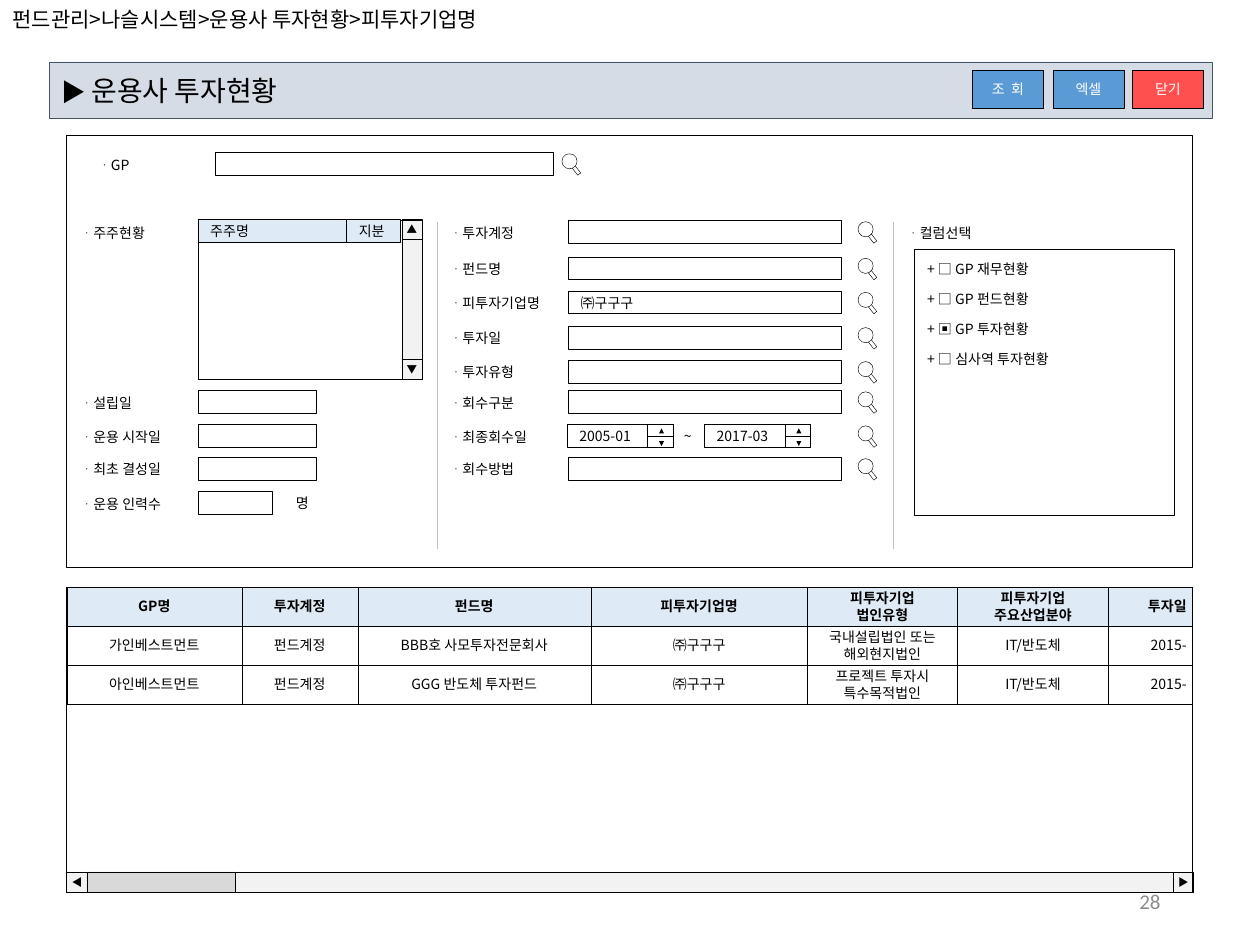
from lxml.etree import SubElement
from pptx import Presentation
from pptx.dml.color import RGBColor
from pptx.enum.shapes import MSO_CONNECTOR as Connector, MSO_SHAPE as Shape
from pptx.enum.text import MSO_ANCHOR as Anchor, MSO_AUTO_SIZE as AutoSize, PP_ALIGN as Align
from pptx.oxml.ns import qn
from pptx.util import Inches, Pt

BLACK = RGBColor(0x00, 0x00, 0x00)
WHITE = RGBColor(0xFF, 0xFF, 0xFF)
BAR = RGBColor(0xD6, 0xDC, 0xE5)
BAR_EDGE = RGBColor(0x44, 0x54, 0x6A)
BLUE = RGBColor(0x5B, 0x9B, 0xD5)
RED = RGBColor(0xFF, 0x50, 0x50)
HEADER = RGBColor(0xDE, 0xEB, 0xF7)
TRACK = RGBColor(0xF2, 0xF2, 0xF2)
THUMB = RGBColor(0xD9, 0xD9, 0xD9)
DIVIDER = RGBColor(0xBF, 0xBF, 0xBF)
PAGE_GREY = RGBColor(0x8C, 0x8C, 0x8C)

INSETS = (0.1, 0.05, 0.1, 0.05)
FIELD_HEIGHT = 0.18
BUTTON = 0.16

SHAREHOLDER_LABEL = ("ᆞ주주현황", 1.74)
FUND_ROWS = [("ᆞ설립일", 3.09, 0.94), ("ᆞ운용 시작일", 3.36, 0.94),
             ("ᆞ최초 결성일", 3.62, 0.94), ("ᆞ운용 인력수", 3.89, 0.59)]
INVESTMENT_ROWS = [("ᆞ투자계정", 1.74, ""), ("ᆞ펀드명", 2.03, ""), ("ᆞ피투자기업명", 2.3, "㈜구구구"),
                   ("ᆞ투자일", 2.58, ""), ("ᆞ투자유형", 2.85, ""), ("ᆞ회수구분", 3.09, ""),
                   ("ᆞ최종회수일", 3.36, None), ("ᆞ회수방법", 3.62, "")]
COLUMN_CHOICES = ["+ □ GP 재무현황", "+ □ GP 펀드현황", "+ ▣ GP 투자현황", "+ □ 심사역 투자현황"]
COLUMN_WIDTHS = [1.39, 0.92, 1.85, 1.72, 1.19, 1.2, 0.66]
INVESTMENTS = [
    ["GP명", "투자계정", "펀드명", "피투자기업명", "피투자기업\n법인유형", "피투자기업\n주요산업분야", "투자일"],
    ["가인베스트먼트", "펀드계정", "BBB호 사모투자전문회사", "㈜구구구", "국내설립법인 또는 해외현지법인",
     "IT/반도체", "2015-"],
    ["아인베스트먼트", "펀드계정", "GGG 반도체 투자펀드", "㈜구구구", "프로젝트 투자시 특수목적법인",
     "IT/반도체", "2015-"],
]


class Screen:
    font = "Noto Sans CJK KR"
    hairline = Pt(0.25)

    def __init__(self, slide):
        self.slide = slide

    def style_run(self, run, size, color, font, bold=False):
        run.font.size = Pt(size)
        run.font.bold = bold
        run.font.color.rgb = color
        run.font.name = font
        SubElement(run._r.get_or_add_rPr(), qn("a:ea"), typeface=font)

    def fill_text(self, frame, text, size=8, color=BLACK, align=Align.LEFT, insets=INSETS,
                  font=None):
        frame.text = text
        frame.word_wrap = True
        frame.auto_size = AutoSize.NONE
        frame.vertical_anchor = Anchor.MIDDLE
        (frame.margin_left, frame.margin_top,
         frame.margin_right, frame.margin_bottom) = map(Inches, insets)
        for paragraph in frame.paragraphs:
            paragraph.alignment = align
            for run in paragraph.runs:
                self.style_run(run, size, color, font or self.font)

    def title(self, text, *box):
        holder = self.slide.shapes.title
        holder.left, holder.top, holder.width, holder.height = map(Inches, box)
        self.fill_text(holder.text_frame, text, size=12)

    def label(self, text, *box, **style):
        holder = self.slide.shapes.add_textbox(*map(Inches, box))
        self.fill_text(holder.text_frame, text, **style)

    def box(self, *place, fill=None, line=BLACK, kind=Shape.RECTANGLE, rotation=0,
            text="", parent=None, **style):
        shape = (parent or self.slide).shapes.add_shape(kind, *map(Inches, place))
        shape.shadow.inherit = False
        shape.rotation = rotation
        if fill is None:
            shape.fill.background()
        else:
            shape.fill.solid()
            shape.fill.fore_color.rgb = fill
        if line is None:
            shape.line.fill.background()
        else:
            shape.line.color.rgb = line
            shape.line.width = self.hairline
        if text:
            self.fill_text(shape.text_frame, text, **style)
        return shape

    def magnifier(self, left, top):
        glass = self.slide.shapes.add_group_shape()
        self.box(left + 0.04, top + 0.1, 0.12, 0.03, rotation=51.8, parent=glass)
        self.box(left, top, 0.12, 0.12, kind=Shape.OVAL, fill=WHITE, parent=glass)

    def month_picker(self, left, top, month):
        self.box(left, top, 0.84, FIELD_HEIGHT, text=month)
        spinner = self.slide.shapes.add_group_shape()
        edge = left + 0.64
        self.box(edge, top, 0.2, FIELD_HEIGHT, parent=spinner)
        for offset, rotation in ((0.03, 0), (0.13, 180)):
            self.box(edge + 0.09, top + offset, 0.04, 0.04, kind=Shape.ISOSCELES_TRIANGLE,
                     fill=BLACK, line=None, rotation=rotation, parent=spinner)
        self.box(edge, top + 0.09, 0.2, 0.09, parent=spinner)

    def scroll_button(self, left, top, arrow, align, side):
        self.box(left, top, BUTTON, BUTTON, text=arrow, size=6, align=align,
                 insets=(side, 0, side, 0))

    def divider(self, x, top, bottom):
        rule = self.slide.shapes.add_connector(
            Connector.STRAIGHT, *map(Inches, (x, top, x, bottom)))
        rule.line.color.rgb = DIVIDER
        rule.line.width = self.hairline
        SubElement(rule._element.spPr, qn("a:effectLst"))

    def border(self, cell):
        properties = cell._tc.get_or_add_tcPr()
        for position, side in enumerate(("a:lnL", "a:lnR", "a:lnT", "a:lnB")):
            edge = properties.makeelement(qn(side), {"w": str(int(self.hairline))})
            SubElement(SubElement(edge, qn("a:solidFill")), qn("a:srgbClr"), val=str(BLACK))
            properties.insert(position, edge)

    def table(self, rows, widths, left, top, row_height):
        frame = self.slide.shapes.add_table(
            len(rows), len(widths),
            *map(Inches, (left, top, sum(widths), row_height * len(rows))))
        grid = frame.table
        for column, width in zip(grid.columns, widths):
            column.width = Inches(width)
        for row_index, texts in enumerate(rows):
            grid.rows[row_index].height = Inches(row_height)
            for column_index, text in enumerate(texts):
                last = column_index == len(widths) - 1
                cell = grid.cell(row_index, column_index)
                cell.text_frame.text = text
                cell.vertical_anchor = Anchor.MIDDLE
                cell.margin_top = cell.margin_bottom = 0
                cell.margin_left = Inches(0.1)
                cell.margin_right = Inches(0.04 if last else 0.1)
                cell.fill.solid()
                cell.fill.fore_color.rgb = WHITE if row_index else HEADER
                self.border(cell)
                for paragraph in cell.text_frame.paragraphs:
                    paragraph.alignment = Align.RIGHT if last else Align.CENTER
                    paragraph.line_spacing = 0.85
                    for run in paragraph.runs:
                        self.style_run(run, 8, BLACK, self.font, bold=row_index == 0)


def main():
    deck = Presentation()
    deck.slide_width, deck.slide_height = Inches(10), Inches(7.5)
    screen = Screen(deck.slides.add_slide(deck.slide_layouts[5]))

    screen.title("펀드관리>나슬시스템>운용사 투자현황>피투자기업명", 0, -0.01, 10, 0.33)
    heading = screen.box(0.39, 0.49, 9.23, 0.45, fill=BAR, line=BAR_EDGE, text="▶ ", size=14)
    heading_run = heading.text_frame.paragraphs[0].add_run()
    heading_run.text = "운용사 투자현황"
    screen.style_run(heading_run, 16, BLACK, screen.font)
    for left, caption, fill in ((7.72, "조  회", BLUE), (8.36, "엑셀", BLUE), (8.99, "닫기", RED)):
        screen.box(left, 0.56, 0.56, 0.3, fill=fill, text=caption, color=WHITE, align=Align.CENTER)

    screen.box(0.53, 1.07, 8.93, 3.43)
    screen.label("ᆞGP", 0.68, 1.2, 1.03, 0.21)
    screen.box(1.71, 1.21, 2.68, FIELD_HEIGHT)
    screen.magnifier(4.46, 1.22)
    for x in (3.47, 7.09):
        screen.divider(x, 1.76, 4.36)

    name, top = SHAREHOLDER_LABEL
    screen.label(name, 0.54, top, 1.03, 0.21)
    screen.box(1.57, 1.75, 1.77, 1.26)
    screen.box(1.57, top, 1.18, FIELD_HEIGHT, fill=HEADER, text="주주명")
    screen.box(2.75, top, 0.43, FIELD_HEIGHT, fill=HEADER, text="지분")
    screen.box(3.19, 1.75, BUTTON, 1.26, fill=TRACK)
    screen.scroll_button(3.19, 1.74, "▲", Align.CENTER, 0)
    screen.scroll_button(3.19, 2.85, "▼", Align.CENTER, 0)
    for name, top, width in FUND_ROWS:
        screen.label(name, 0.54, top, 1.03, 0.21)
        screen.box(1.57, top + 0.01, width, FIELD_HEIGHT)
    screen.label("명", 2.25, 3.9, 0.28, FIELD_HEIGHT)

    for name, top, value in INVESTMENT_ROWS:
        screen.label(name, 3.47, top, 1.03, 0.21)
        if value is None:
            screen.month_picker(4.5, top + 0.01, "2005-01")
            screen.label("~", 5.33, top + 0.01, 0.24, FIELD_HEIGHT)
            screen.month_picker(5.59, top + 0.01, "2017-03")
        else:
            screen.box(4.51, top + 0.01, 2.17, FIELD_HEIGHT, text=value)
        screen.magnifier(6.81, top + 0.02)

    screen.label("ᆞ컬럼선택", 7.1, 1.74, 1.03, 0.21)
    screen.box(7.26, 1.98, 2.06, 2.11)
    for index, choice in enumerate(COLUMN_CHOICES):
        screen.label(choice, 7.26, 2.03 + 0.71 / 3 * index, 1.3, 0.21)

    screen.box(0.53, 4.66, 8.93, 2.42)
    screen.table(INVESTMENTS, COLUMN_WIDTHS, 0.53, 4.66, 0.31)
    screen.box(0.53, 6.92, 8.93, BUTTON, fill=TRACK)
    screen.box(0.69, 6.92, 1.18, BUTTON, fill=THUMB)
    screen.scroll_button(0.53, 6.92, "◀", Align.LEFT, 0.04)
    screen.scroll_button(9.31, 6.92, "▶", Align.RIGHT, 0.04)
    screen.label("28", 7.06, 6.95, 2.25, 0.4, size=12, color=PAGE_GREY,
                 align=Align.RIGHT, font="Calibri")
    deck.save("out.pptx")


if __name__ == "__main__":
    main()
